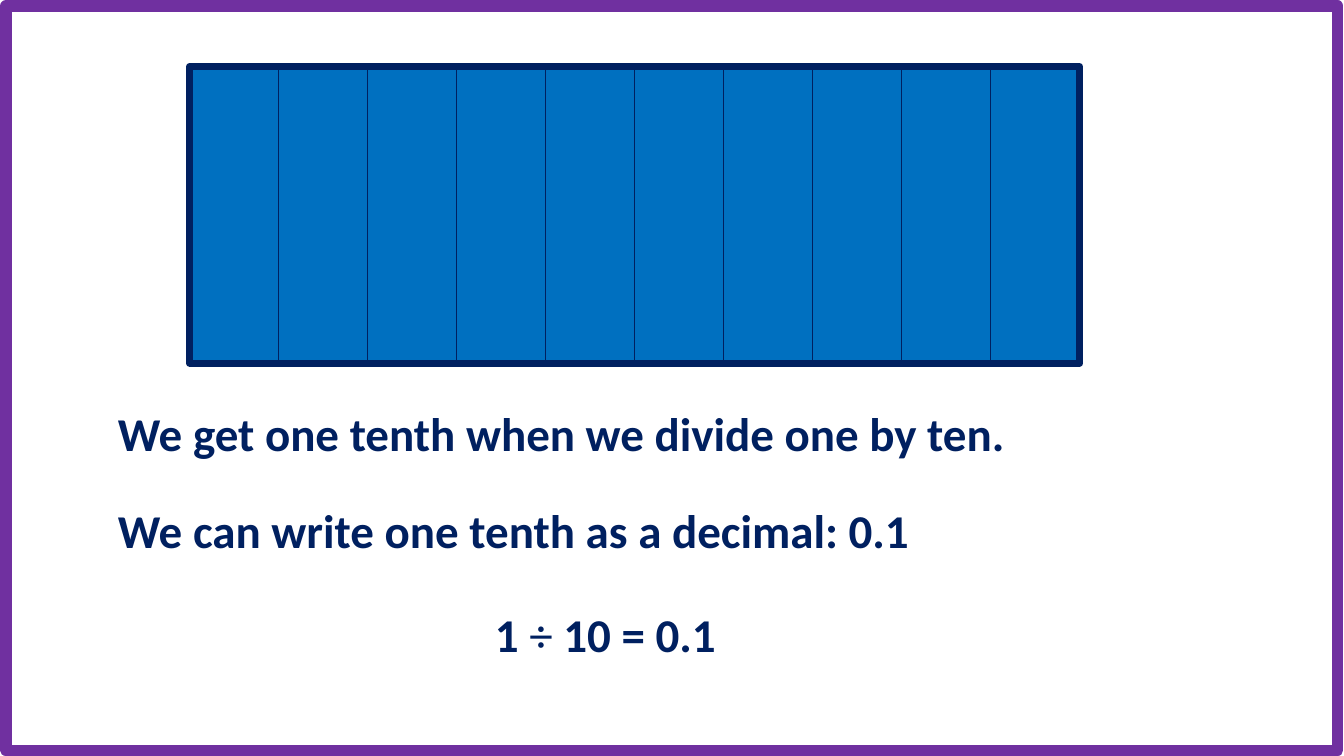
"""Build a slide that shows one tenth as a bar model and as a decimal."""
from pptx import Presentation
from pptx.dml.color import RGBColor
from pptx.enum.shapes import MSO_SHAPE
from pptx.enum.text import MSO_AUTO_SIZE
from pptx.util import Cm, Pt

NAVY = RGBColor(0x00, 0x20, 0x60)
BLUE = RGBColor(0x00, 0x70, 0xC0)
PURPLE = RGBColor(0x70, 0x30, 0xA0)

BAR_LEFT, BAR_TOP, BAR_WIDTH, BAR_HEIGHT = 4.78, 1.68, 22.43, 7.47
PARTS = 10
PART_WIDTH = BAR_WIDTH / PARTS

deck = Presentation()
deck.slide_width = Cm(33.87)
deck.slide_height = Cm(19.05)
page = deck.slides.add_slide(deck.slide_layouts[6])


def add_rectangle(left, top, width, height, line_color, line_points, fill_color=None):
    rectangle = page.shapes.add_shape(
        MSO_SHAPE.RECTANGLE, Cm(left), Cm(top), Cm(width), Cm(height))
    rectangle.shadow.inherit = False
    if fill_color is None:
        rectangle.fill.background()
    else:
        rectangle.fill.solid()
        rectangle.fill.fore_color.rgb = fill_color
    rectangle.line.color.rgb = line_color
    rectangle.line.width = Pt(line_points)


for part in range(PARTS):
    add_rectangle(BAR_LEFT + part * PART_WIDTH, BAR_TOP, PART_WIDTH, BAR_HEIGHT,
                  NAVY, 1, BLUE)
add_rectangle(BAR_LEFT, BAR_TOP, BAR_WIDTH, BAR_HEIGHT, NAVY, 5)

sentences = [
    (2.72, 10.08, 23.37, [("We get one tenth when we divide one by ten.", True)]),
    (2.72, 12.52, 20.68, [("We can write one tenth as a decimal: 0.1", True)]),
    (12.22, 15.14, 6.15, [("1 ", True), ("÷ ", False), ("10 = 0.1", True)]),
]
for left, top, width, spans in sentences:
    box = page.shapes.add_textbox(Cm(left), Cm(top), Cm(width), Cm(1.7))
    box.text_frame.word_wrap = False
    box.text_frame.auto_size = MSO_AUTO_SIZE.SHAPE_TO_FIT_TEXT
    para = box.text_frame.paragraphs[0]
    for text, bold in spans:
        span = para.add_run()
        span.text = text
        span.font.name = "Calibri"
        span.font.size = Pt(33.6)
        span.font.bold = bold
        span.font.color.rgb = NAVY

add_rectangle(0.15, 0.15, 33.56, 18.76, PURPLE, 8.25)

deck.save("out.pptx")
